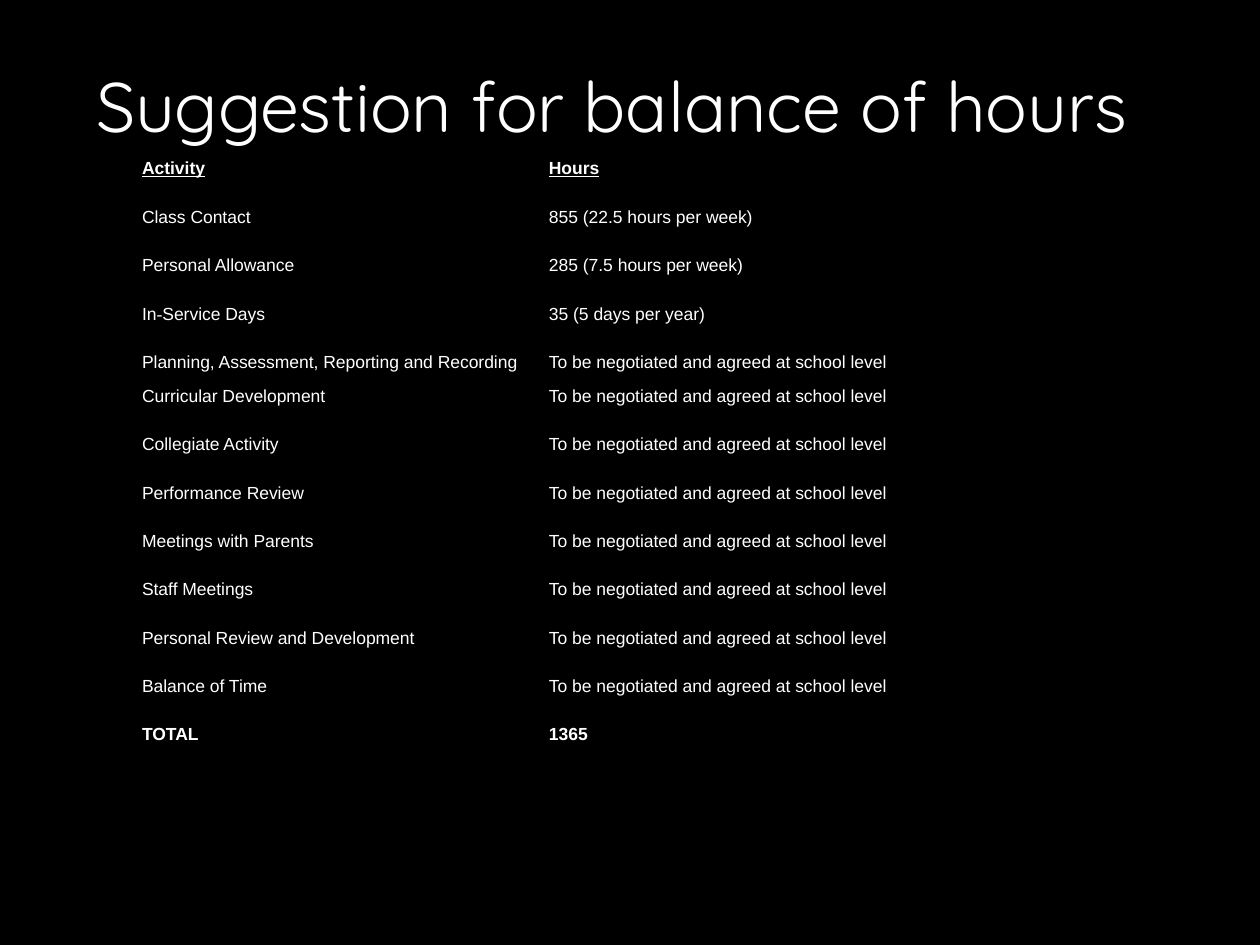
from lxml import etree
from pptx import Presentation
from pptx.dml.color import RGBColor
from pptx.enum.text import PP_ALIGN
from pptx.oxml.ns import qn
from pptx.util import Pt

JUSTIFY = PP_ALIGN.JUSTIFY
BLACK = RGBColor(0, 0, 0)
WHITE = RGBColor(255, 255, 255)

TITLE = "Suggestion for balance of hours"
NEGOTIATED = "To be negotiated and agreed at school level"
PLANNING = "Planning, Assessment, Reporting and Recording"
HYPHEN = "‐"
HOURS = [
    ("Activity", "Hours"),
    ("Class Contact", "855 (22.5 hours per week)"),
    ("Personal Allowance", "285 (7.5 hours per week)"),
    ("In‐Service Days", "35 (5 days per year)"),
    (PLANNING, NEGOTIATED),
    ("Curricular Development", NEGOTIATED),
    ("Collegiate Activity", NEGOTIATED),
    ("Performance Review", NEGOTIATED),
    ("Meetings with Parents", NEGOTIATED),
    ("Staff Meetings", NEGOTIATED),
    ("Personal Review and Development", NEGOTIATED),
    ("Balance of Time", NEGOTIATED),
    ("TOTAL", "1365"),
]
COLUMN_WIDTHS = (232.5, 294.5)
ROW_HEIGHT = 27.65
PLANNING_HEIGHT = 19.4


def style(font, name, size):
    font.name = name
    font.size = Pt(size)
    font.color.rgb = WHITE


def add_borders(cell):
    properties = cell._tc.get_or_add_tcPr()
    for position, side in enumerate(("lnL", "lnR", "lnT", "lnB")):
        line = etree.Element(qn(f"a:{side}"), w=str(Pt(1)))
        fill = etree.SubElement(line, qn("a:solidFill"))
        etree.SubElement(fill, qn("a:srgbClr"), val=str(BLACK))
        properties.insert(position, line)


def fill_cell(cell, text, bold, underline):
    cell.margin_left = cell.margin_right = Pt(5)
    cell.margin_top = cell.margin_bottom = 0
    cell.fill.background()
    add_borders(cell)
    paragraph = cell.text_frame.paragraphs[0]
    paragraph.alignment = JUSTIFY
    paragraph.line_spacing = 1.15
    for part in filter(None, text.partition(HYPHEN)):
        run = paragraph.add_run()
        run.text = part
        style(run.font, "Times New Roman" if part == HYPHEN else "Arial", 10)
        run.font.bold = bold
        run.font.underline = underline


def main():
    deck = Presentation()
    deck.slide_width, deck.slide_height = Pt(720), Pt(540)
    slide = deck.slides.add_slide(deck.slide_layouts[6])
    slide.background.fill.solid()
    slide.background.fill.fore_color.rgb = BLACK

    title = slide.shapes.add_textbox(Pt(48), Pt(32), Pt(641), Pt(133)).text_frame
    title.word_wrap = True
    title.text = TITLE
    style(title.paragraphs[0].runs[0].font, "Quicksand", 40)

    heights = [PLANNING_HEIGHT if activity == PLANNING else ROW_HEIGHT
               for activity, _ in HOURS]
    table = slide.shapes.add_table(
        len(HOURS), len(COLUMN_WIDTHS), Pt(76.2), Pt(89.3),
        Pt(sum(COLUMN_WIDTHS)), Pt(sum(heights))).table
    table.first_row = table.horz_banding = False
    for column, width in zip(table.columns, COLUMN_WIDTHS):
        column.width = Pt(width)
    last = len(HOURS) - 1
    for index, (entry, height) in enumerate(zip(HOURS, heights)):
        table.rows[index].height = Pt(height)
        for column, text in enumerate(entry):
            fill_cell(table.cell(index, column), text,
                      bold=index in (0, last), underline=index == 0)

    deck.save("out.pptx")


if __name__ == "__main__":
    main()
